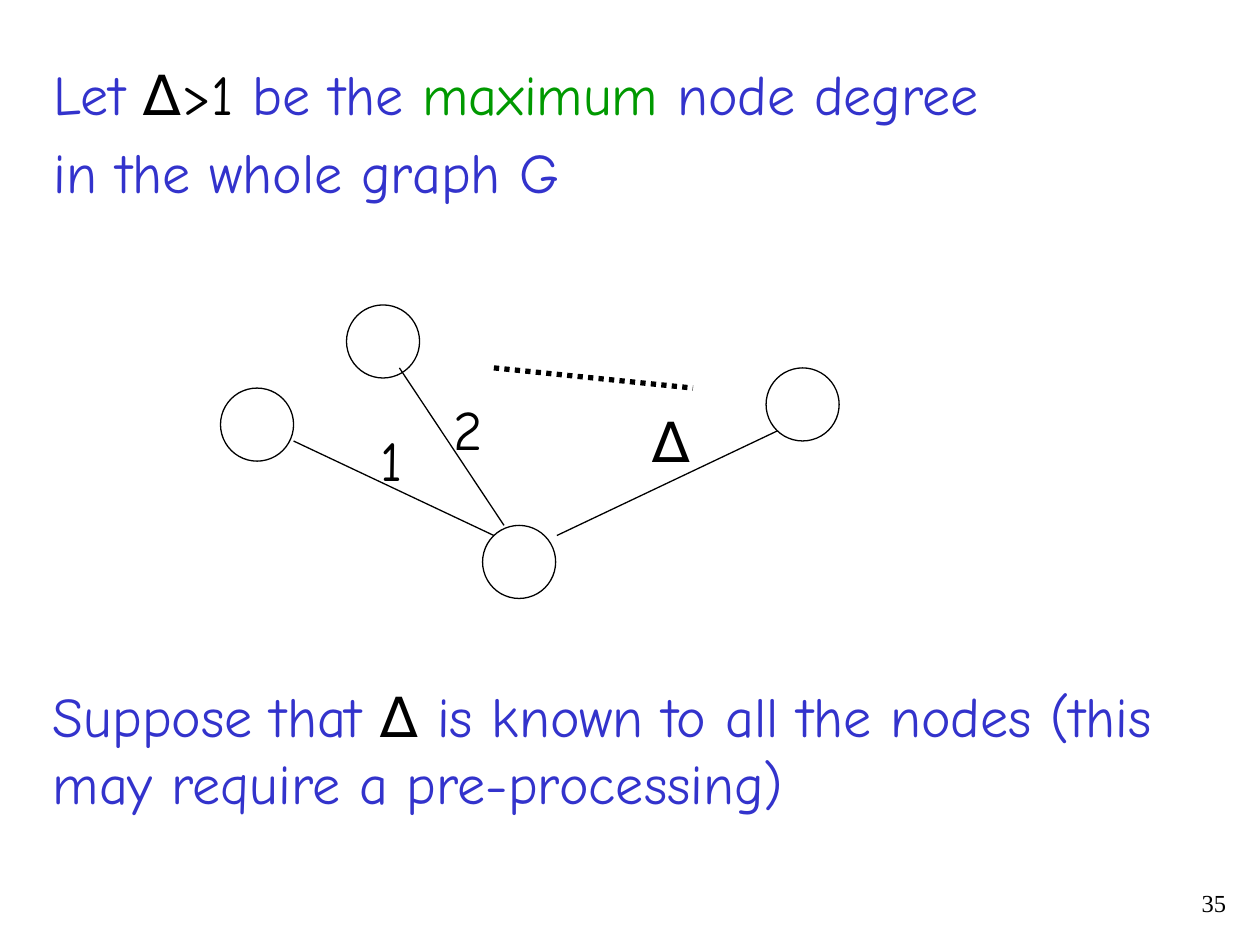
from dataclasses import dataclass

import pptx
import pptx.dml.color
import pptx.enum.dml
import pptx.enum.shapes
import pptx.enum.text
import pptx.oxml.ns
import pptx.oxml.xmlchemy
import pptx.util
from pptx.util import Inches


@dataclass(frozen=True)
class Theme:
    black: str = "000000"
    blue: str = "3333CC"
    green: str = "009900"
    body_font: str = "Comic Neue"
    number_font: str = "Times New Roman"
    body_size: int = 32
    number_size: int = 14
    paragraph_gap: float = 6.4
    thin: float = 0.75
    thick: float = 3
    node_size: float = 0.58


class SlideBuilder:
    """Draw text, graph nodes and edges on one slide in a shared style."""

    def __init__(self, slide, theme):
        self.slide = slide
        self.theme = theme

    def color(self, value):
        return pptx.dml.color.RGBColor.from_string(value)

    def text(self, left, top, width, height, paragraphs, wrap=False, font=None, size=None,
             align=pptx.enum.text.PP_ALIGN.LEFT):
        box = self.slide.shapes.add_textbox(
            Inches(left), Inches(top), Inches(width), Inches(height))
        frame = box.text_frame
        frame.word_wrap = wrap
        for index, runs in enumerate(paragraphs):
            paragraph = frame.add_paragraph() if index else frame.paragraphs[0]
            paragraph.alignment = align
            paragraph.font.name = font or self.theme.body_font
            paragraph.font.size = pptx.util.Pt(size or self.theme.body_size)
            if index:
                paragraph.space_before = pptx.util.Pt(self.theme.paragraph_gap)
            for words, color in runs:
                run = paragraph.add_run()
                run.text = words
                run.font.color.rgb = self.color(color)

    def node(self, left, top):
        size = Inches(self.theme.node_size)
        circle = self.slide.shapes.add_shape(
            pptx.enum.shapes.MSO_SHAPE.OVAL, Inches(left), Inches(top), size, size)
        circle.shadow.inherit = False
        circle.fill.background()
        circle.line.color.rgb = self.color(self.theme.black)
        circle.line.width = pptx.util.Pt(self.theme.thin)

    def edge(self, start, end, width=None, dash=None):
        line = self.slide.shapes.add_connector(
            pptx.enum.shapes.MSO_CONNECTOR.STRAIGHT, *map(Inches, start + end))
        line.line.color.rgb = self.color(self.theme.black)
        line.line.width = pptx.util.Pt(width or self.theme.thin)
        if dash:
            line.line.dash_style = dash
        properties = line.element.find(pptx.oxml.ns.qn("p:spPr"))
        properties.append(pptx.oxml.xmlchemy.OxmlElement("a:effectLst"))


def main():
    presentation = pptx.Presentation()
    presentation.slide_width = Inches(10)
    presentation.slide_height = Inches(7.5)
    theme = Theme()
    slide = presentation.slides.add_slide(presentation.slide_layouts[6])
    builder = SlideBuilder(slide, theme)

    builder.text(7.75, 7, 2.08, 0.33, [[("35", theme.black)]], wrap=True,
                 font=theme.number_font, size=theme.number_size,
                 align=pptx.enum.text.PP_ALIGN.RIGHT)
    builder.text(0.33, 0.42, 8.14, 1.29, [
        [("Let ", theme.blue), ("∆>1", theme.black), (" be the ", theme.blue),
         ("maximum", theme.green), (" node degree", theme.blue)],
        [("in the whole graph G", theme.blue)],
    ])

    for left, top in [(3.83, 4.17), (1.75, 3.08), (2.75, 2.42), (6.08, 2.92)]:
        builder.node(left, top)
    for start, end in [((2.33, 3.5), (3.92, 4.25)),
                       ((4, 4.17), (3.17, 2.92)),
                       ((4.42, 4.25), (6.17, 3.42))]:
        builder.edge(start, end)
    builder.edge((3.92, 2.92), (5.5, 3.08), theme.thick,
                 pptx.enum.dml.MSO_LINE.ROUND_DOT)
    for label, left, top, width in [("1", 2.92, 3.33, 0.4),
                                    ("2", 3.5, 3.08, 0.47),
                                    ("∆", 5.08, 3.18, 0.56)]:
        builder.text(left, top, width, 0.63, [[(label, theme.black)]])

    builder.text(0.32, 5.36, 9.18, 1.17, [[
        ("Suppose that ", theme.blue), ("∆ ", theme.black),
        ("is known to all the nodes (this may require a pre-processing)", theme.blue),
    ]], wrap=True)

    presentation.save("out.pptx")


if __name__ == "__main__":
    main()
